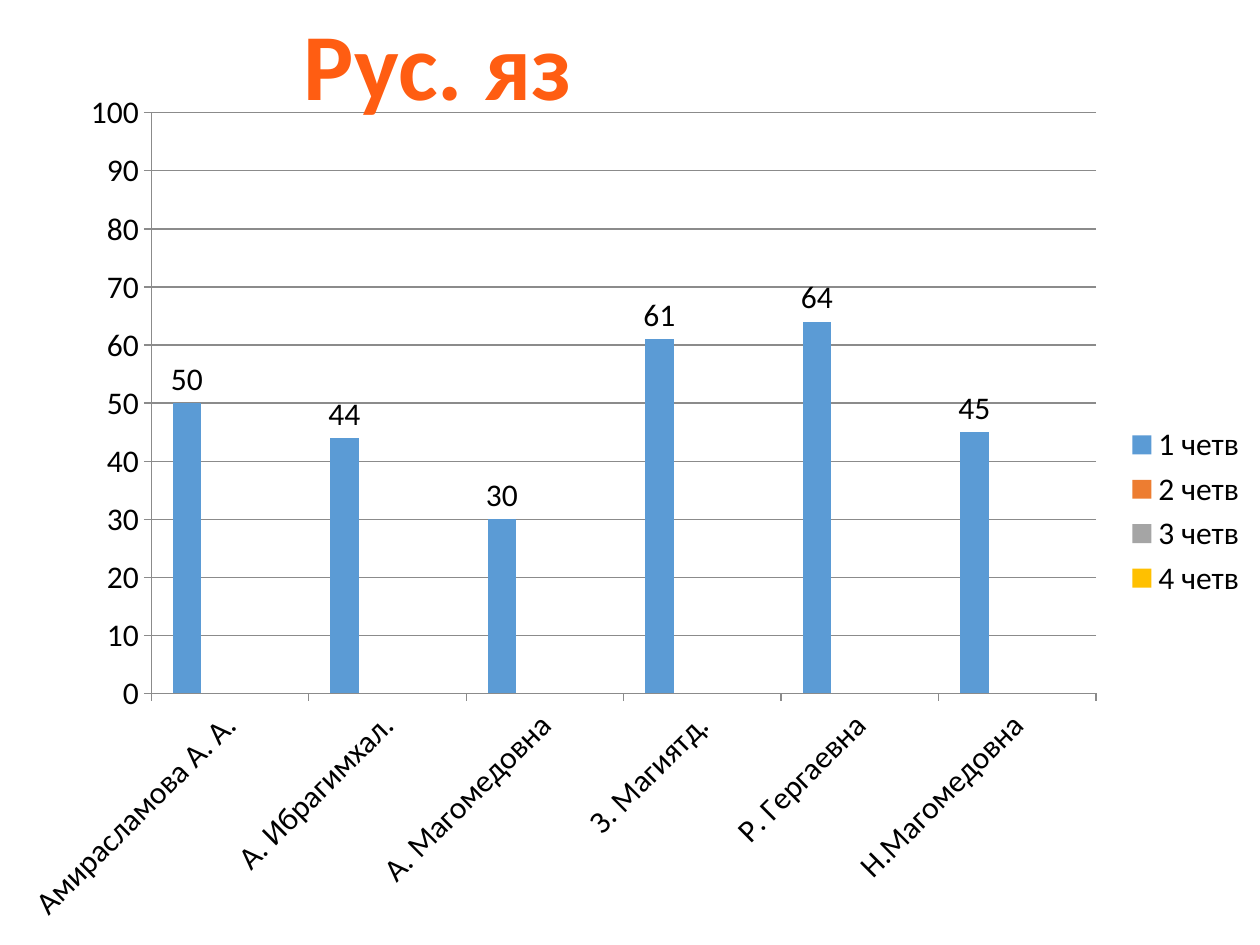
import dataclasses

import lxml.etree
import pptx
import pptx.chart.data
import pptx.dml.color
import pptx.enum.chart
import pptx.enum.text
import pptx.oxml
import pptx.oxml.ns
import pptx.util

FONT = "Calibri"
GRID_COLOUR = "8B8B8B"
TEACHERS = ["Амирасламова А. А.", "А. Ибрагимхал.", "А. Магомедовна",
            "З. Магиятд.", "Р. Гергаевна", "Н.Магомедовна"]


@dataclasses.dataclass
class Quarter:
    name: str
    colour: str
    scores: list[int | None]


NO_SCORES = [None] * len(TEACHERS)
QUARTERS = [
    Quarter("1 четв", "5B9BD5", [50, 44, 30, 61, 64, 45]),
    Quarter("2 четв", "ED7D31", NO_SCORES),
    Quarter("3 четв", "A5A5A5", NO_SCORES),
    Quarter("4 четв", "FFC000", NO_SCORES),
]
PLOT_SHARES = {"x": 0.12, "y": 0.04, "w": 0.75, "h": 0.67}


def colour(value: str) -> pptx.dml.color.RGBColor:
    return pptx.dml.color.RGBColor.from_string(value)


def style_line(line) -> None:
    line.color.rgb = colour(GRID_COLOUR)
    line.width = pptx.util.Pt(0.75)


def place_plot(chart) -> None:
    plot_area = chart.plots[0]._element.getparent()
    for old in plot_area.findall(pptx.oxml.ns.qn("c:layout")):
        plot_area.remove(old)
    layout = lxml.etree.Element(pptx.oxml.ns.qn("c:layout"))
    manual = lxml.etree.SubElement(layout, pptx.oxml.ns.qn("c:manualLayout"))
    settings = {"layoutTarget": "inner", "xMode": "edge", "yMode": "edge", **PLOT_SHARES}
    for tag, value in settings.items():
        lxml.etree.SubElement(manual, pptx.oxml.ns.qn(f"c:{tag}")).set("val", str(value))
    plot_area.insert(0, layout)


def style_axes(chart) -> None:
    for axis in (chart.category_axis, chart.value_axis):
        axis.major_tick_mark = pptx.enum.chart.XL_TICK_MARK.OUTSIDE
        axis.minor_tick_mark = pptx.enum.chart.XL_TICK_MARK.NONE
        style_line(axis.format.line)
    chart.value_axis.minimum_scale = 0
    chart.value_axis.maximum_scale = 100
    chart.value_axis.major_unit = 10
    chart.value_axis.has_major_gridlines = True
    style_line(chart.value_axis.major_gridlines.format.line)
    chart.category_axis.tick_labels.font.size = pptx.util.Pt(18)
    text = chart.category_axis._element.find(pptx.oxml.ns.qn("c:txPr"))
    text.find(pptx.oxml.ns.qn("a:bodyPr")).set("rot", str(-45 * 60000))


def add_scores(deck, page) -> None:
    data = pptx.chart.data.CategoryChartData()
    data.categories = TEACHERS
    for quarter in QUARTERS:
        data.add_series(quarter.name, quarter.scores)
    top = pptx.util.Inches(0.62)
    chart = page.shapes.add_chart(
        pptx.enum.chart.XL_CHART_TYPE.COLUMN_CLUSTERED, 0, top,
        deck.slide_width, deck.slide_height - top, data).chart
    chart.has_title = False
    chart.font.name = FONT
    chart.font.size = pptx.util.Pt(18)
    chart.font.color.rgb = colour("000000")
    chart.has_legend = True
    chart.legend.position = pptx.enum.chart.XL_LEGEND_POSITION.RIGHT
    chart.legend.include_in_layout = False
    plot = chart.plots[0]
    plot.gap_width = 150
    plot.overlap = 0
    plot.vary_by_categories = False
    for series, quarter in zip(plot.series, QUARTERS):
        series.format.fill.solid()
        series.format.fill.fore_color.rgb = colour(quarter.colour)
        series.data_labels.show_value = True
        series.data_labels.position = pptx.enum.chart.XL_LABEL_POSITION.OUTSIDE_END
    style_axes(chart)
    place_plot(chart)


def set_title(page, words: str) -> None:
    box = page.shapes.title
    box.left, box.top = pptx.util.Inches(2.3), 0
    box.width, box.height = pptx.util.Inches(2.35), pptx.util.Inches(1.01)
    frame = box.text_frame
    frame.text = words
    frame.word_wrap = False
    frame.auto_size = pptx.enum.text.MSO_AUTO_SIZE.SHAPE_TO_FIT_TEXT
    frame.vertical_anchor = pptx.enum.text.MSO_ANCHOR.TOP
    para = frame.paragraphs[0]
    para.alignment = pptx.enum.text.PP_ALIGN.CENTER
    para.font.name = FONT
    para.font.size = pptx.util.Pt(54)
    para.font.bold = True
    para.font.color.rgb = colour("FF5D12")
    page.shapes._spTree.append(box._element)


def main() -> None:
    deck = pptx.Presentation()
    deck.slide_width = pptx.util.Inches(10)
    deck.slide_height = pptx.util.Inches(7.5)
    page = deck.slides.add_slide(deck.slide_layouts.get_by_name("Title Only"))
    add_scores(deck, page)
    set_title(page, "Рус. яз")
    deck.save("out.pptx")


if __name__ == "__main__":
    main()
